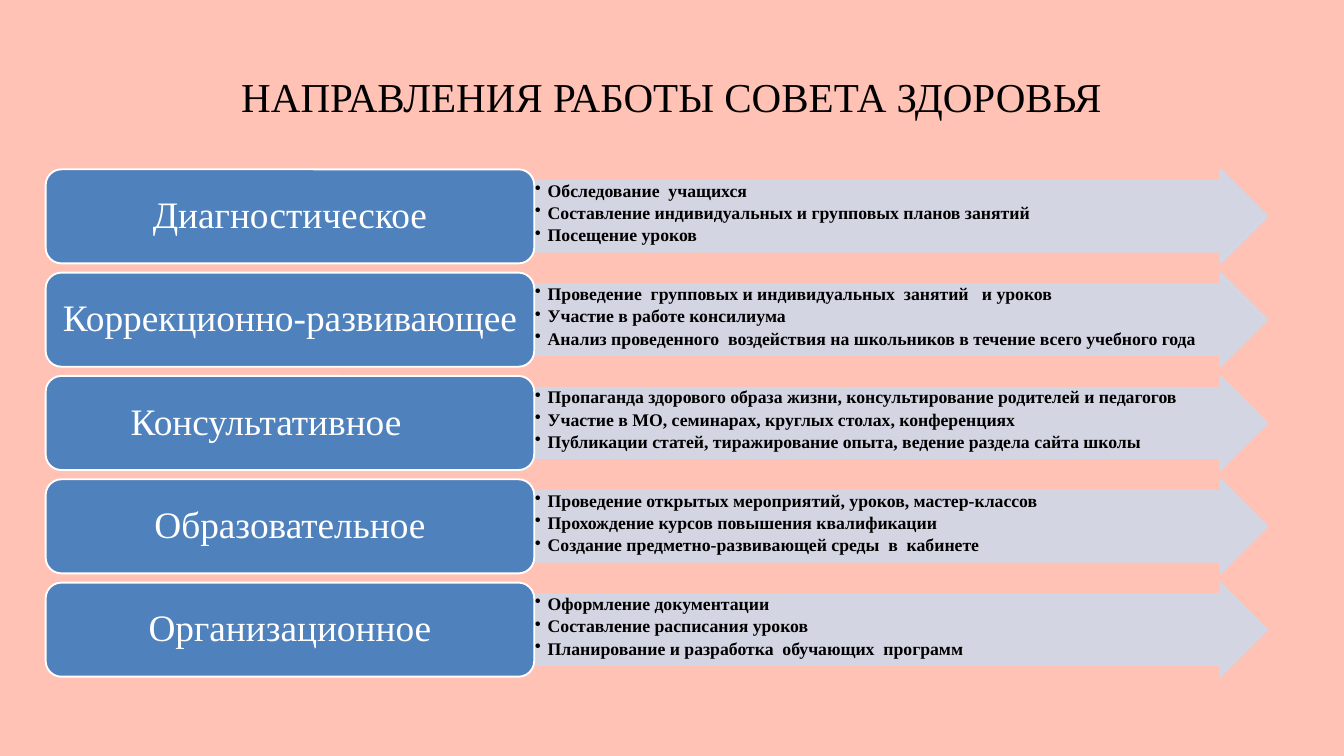
from lxml import etree
from pptx import Presentation
from pptx.dml.color import RGBColor
from pptx.enum.shapes import MSO_SHAPE
from pptx.enum.text import MSO_ANCHOR, MSO_AUTO_SIZE, PP_ALIGN
from pptx.oxml.ns import qn
from pptx.util import Inches, Pt

ARROW, BOX = MSO_SHAPE.RIGHT_ARROW, MSO_SHAPE.ROUNDED_RECTANGLE
TOP, MIDDLE = MSO_ANCHOR.TOP, MSO_ANCHOR.MIDDLE
LEFT, CENTER = PP_ALIGN.LEFT, PP_ALIGN.CENTER
NO_FIT = MSO_AUTO_SIZE.NONE

FONT = "Times New Roman"
PINK, BLUE, PALE, WHITE, BLACK = "FFC2B4", "4F81BD", "D0D8E8", "FFFFFF", "000000"

# Rows: left edge of the labels, edge between label and arrow, right edge
EDGE, SPLIT, END = 0.68, 7.95, 18.86
FIRST, STEP, HIGH = 2.52, 1.5375, 1.4

# Label, extra right inset, list items
ROWS = [
    ("Диагностическое", 0, [
        "Обследование  учащихся",
        "Составление индивидуальных и групповых планов занятий",
        "Посещение уроков"]),
    ("Коррекционно-развивающее", 0, [
        "Проведение  групповых и индивидуальных  занятий   и уроков",
        "Участие в работе консилиума",
        "Анализ проведенного  воздействия на школьников в течение всего учебного года"]),
    ("Консультативное", 0.71, [
        "Пропаганда здорового образа жизни, консультирование родителей и педагогов",
        "Участие в МО, семинарах, круглых столах, конференциях",
        "Публикации статей, тиражирование опыта, ведение раздела сайта школы"]),
    ("Образовательное", 0, [
        "Проведение открытых мероприятий, уроков, мастер-классов",
        "Прохождение курсов повышения квалификации",
        "Создание предметно-развивающей среды  в  кабинете"]),
    ("Организационное", 0, [
        "Оформление документации",
        "Составление расписания уроков",
        "Планирование и разработка  обучающих  программ"]),
]


def paint(color, tone):
    color.rgb = RGBColor.from_string(tone)


def fade(shape, percent):
    """Make the fill and the line of a shape partly transparent."""
    for tone in shape.element.spPr.iter(qn("a:srgbClr")):
        etree.SubElement(tone, qn("a:alpha"), val=str(percent * 1000))


def place(shape, left, top, width, height):
    shape.left, shape.top = Inches(left), Inches(top)
    shape.width, shape.height = Inches(width), Inches(height)


def set_frame(frame, anchor, left, top, right, bottom):
    frame.word_wrap = True
    frame.auto_size = NO_FIT
    frame.vertical_anchor = anchor
    frame.margin_left, frame.margin_top = Inches(left), Inches(top)
    frame.margin_right, frame.margin_bottom = Inches(right), Inches(bottom)


def style(para, size, tone, align, bold=False):
    para.alignment = align
    font = para.font
    font.name, font.size, font.bold = FONT, Pt(size), bold
    paint(font.color, tone)


def add_bullet(para):
    props = para._p.get_or_add_pPr()
    props.set("marL", str(Inches(0.19)))
    props.set("indent", str(-Inches(0.19)))
    etree.SubElement(props, qn("a:buChar"), char="•")


def add_block(slide, kind, left, top, width, fill, line):
    shape = slide.shapes.add_shape(
        kind, Inches(left), Inches(top), Inches(width), Inches(HIGH))
    shape.shadow.inherit = False
    shape.fill.solid()
    paint(shape.fill.fore_color, fill)
    paint(shape.line.color, line)
    shape.line.width = Pt(2)
    return shape


def add_arrow(slide, top, items):
    arrow = add_block(slide, ARROW, SPLIT, top, END - SPLIT, PALE, PALE)
    arrow.adjustments[0], arrow.adjustments[1] = 0.75, 0.5
    fade(arrow, 90)
    frame = arrow.text_frame
    set_frame(frame, TOP, 0.01, 0.01, 0.01, 0.01)
    frame.text = "\n".join(items)
    for para in frame.paragraphs:
        para.level = 1
        add_bullet(para)
        para.line_spacing, para.space_after = 0.9, Pt(3.5)
        style(para, 19, BLACK, LEFT, bold=True)


def add_label(slide, top, text, extra):
    label = add_block(slide, BOX, EDGE, top, SPLIT - EDGE, BLUE, WHITE)
    frame = label.text_frame
    set_frame(frame, MIDDLE, 0.15, 0.08, 0.15 + extra, 0.08)
    frame.text = text
    para = frame.paragraphs[0]
    para.line_spacing = 0.9
    style(para, 40, WHITE, CENTER)


def add_title(slide, text):
    title = slide.shapes.title
    place(title, EDGE, 0.97, 18.64, 1.25)
    frame = title.text_frame
    set_frame(frame, TOP, 0.1, 0.1, 0.1, 0.1)
    frame.text = text
    style(frame.paragraphs[0], 44, BLACK, CENTER)


def main():
    deck = Presentation()
    deck.slide_width, deck.slide_height = Inches(20), Inches(11.25)
    slide = deck.slides.add_slide(deck.slide_layouts[5])

    # Background and title
    back = slide.background.fill
    back.solid()
    paint(back.fore_color, PINK)
    add_title(slide, "НАПРАВЛЕНИЯ РАБОТЫ СОВЕТА ЗДОРОВЬЯ")

    # One arrow and one label per row
    for row, (text, extra, items) in enumerate(ROWS):
        top = FIRST + row * STEP
        add_arrow(slide, top, items)
        add_label(slide, top, text, extra)

    deck.save("out.pptx")


if __name__ == "__main__":
    main()
